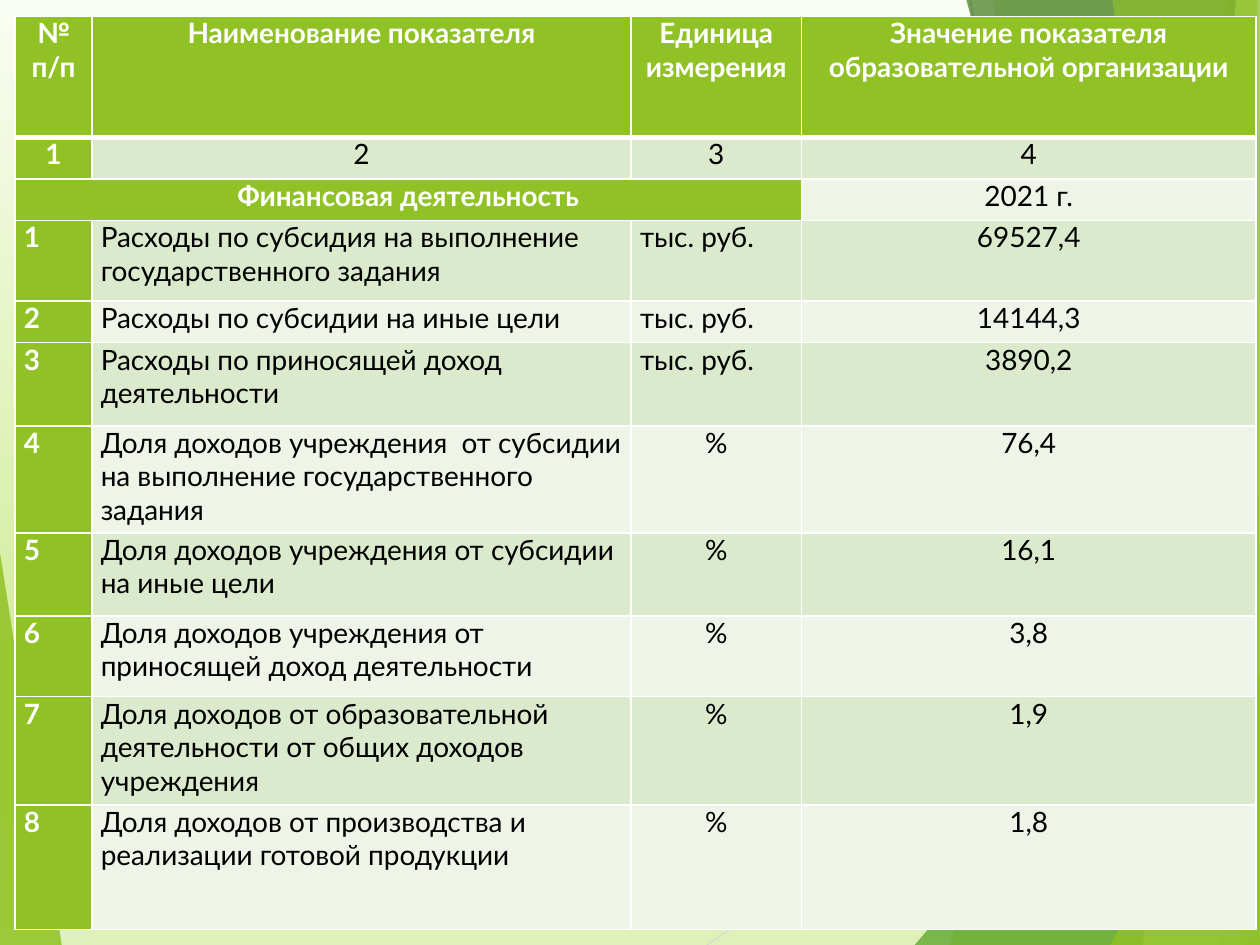
import pptx
import pptx.util
import pptx.dml.color
import pptx.enum.shapes
import pptx.enum.text
import pptx.oxml
import pptx.oxml.ns

RGB = pptx.dml.color.RGBColor.from_string
ALIGN = pptx.enum.text.PP_ALIGN
NS = pptx.oxml.ns.nsdecls("a")

theme = {
    "font": "Lato", "size": pptx.util.Pt(16),
    "green": "90C226", "leaf": "54A021", "dark": "3F7819", "lime": "C0E474",
    "band": "DBE9CD", "pale": "EEF4E8", "white": "FFFFFF", "black": "000000",
    "sky": [(0, "FAFDF3"), (74, "D0EB96"), (83, "D0EB96"), (100, "DFF1B9")],
}

deck = pptx.Presentation()
deck.slide_width, deck.slide_height = pptx.util.Inches(10), pptx.util.Inches(7.5)
wide, high = deck.slide_width, deck.slide_height
slide = deck.slides.add_slide(deck.slide_layouts[6])

# Background gradient, top to bottom
slide.background.fill.gradient()
grad = slide.element.xpath(".//a:gradFill")[0]
for part in list(grad):
    grad.remove(part)
stops = "".join(f'<a:gs pos="{pos * 1000}"><a:srgbClr val="{tint}"/></a:gs>'
                for pos, tint in theme["sky"])
grad.append(pptx.oxml.parse_xml(f"<a:gsLst {NS}>{stops}</a:gsLst>"))
grad.append(pptx.oxml.parse_xml(f'<a:lin {NS} ang="5400000" scaled="0"/>'))

# Facets and lines: colour, opacity in percent, points in percent of the slide
facets = [
    (theme["green"], 85, [(0, 58.5), (4.9, 100), (0, 100)]),
    ("D9D9D9", 100, [(56.1, 100), (100, 60.9)]),
    ("BFBFBF", 100, [(77, 0), (90.4, 100)]),
    (theme["green"], 30, [(97.5, 0), (75.4, 100), (100, 100), (100, 0)]),
    (theme["green"], 20, [(78.8, 0), (91.9, 100), (100, 100), (100, 0)]),
    (theme["leaf"], 72, [(72.6, 100), (100, 57.2), (100, 100)]),
    (theme["dark"], 70, [(76.7, 0), (97, 100), (100, 100), (100, 0)]),
    (theme["lime"], 70, [(98.1, 0), (90.7, 100), (100, 100), (100, 0)]),
    (theme["green"], 65, [(88.3, 0), (98.6, 100), (100, 100), (99.8, 0)]),
    (theme["green"], 80, [(88.1, 100), (100, 71.3), (100, 100)]),
]
for tint, shade, points in facets:
    spots = [(round(x * wide / 100), round(y * high / 100)) for x, y in points]
    if len(spots) == 2:
        line = slide.shapes.add_connector(
            pptx.enum.shapes.MSO_CONNECTOR.STRAIGHT, *spots[0], *spots[1])
        line.line.color.rgb = RGB(tint)
        line.line.width = pptx.util.Pt(0.75)
        line.element.spPr.append(pptx.oxml.parse_xml(f"<a:effectLst {NS}/>"))
        continue
    pen = slide.shapes.build_freeform(*spots[0])
    pen.add_line_segments(spots[1:], close=True)
    facet = pen.convert_to_shape()
    facet.shadow.inherit = False
    facet.fill.solid()
    facet.fill.fore_color.rgb = RGB(tint)
    facet.line.fill.background()
    facet.element.xpath("./p:spPr/a:solidFill/a:srgbClr")[0].append(
        pptx.oxml.parse_xml(f'<a:alpha {NS} val="{shade * 1000}"/>'))

# Table of figures
rows = [
    ("№ п/п", "Наименование показателя", "Единица измерения",
     "Значение показателя образовательной организации"),
    ("1", "2", "3", "4"),
    ("Финансовая деятельность", "", "", "2021 г."),
    ("1", "Расходы по субсидия на выполнение государственного задания",
     "тыс. руб.", "69527,4"),
    ("2", "Расходы по субсидии на иные цели", "тыс. руб.", "14144,3"),
    ("3", "Расходы по приносящей доход деятельности", "тыс. руб.", "3890,2"),
    ("4", "Доля доходов учреждения  от субсидии на выполнение "
          "государственного задания", "%", "76,4"),
    ("5", "Доля доходов учреждения от субсидии на иные цели", "%", "16,1"),
    ("6", "Доля доходов учреждения от приносящей доход деятельности", "%", "3,8"),
    ("7", "Доля доходов от образовательной деятельности от общих доходов "
          "учреждения", "%", "1,9"),
    ("8", "Доля доходов от производства и реализации готовой продукции",
     "%", "1,8"),
]
widths = [0.61, 4.28, 1.35, 3.61]
heights = [0.96, 0.33, 0.33, 0.64, 0.33, 0.66, 0.85, 0.66, 0.64, 0.86, 0.99]
inch = pptx.util.Inches
table = slide.shapes.add_table(len(rows), len(widths), inch(0.12), inch(0.13),
                               inch(sum(widths)), inch(sum(heights))).table
table.first_row = table.horz_banding = False
for col, width in zip(table.columns, widths):
    col.width = inch(width)
for row, height in zip(table.rows, heights):
    row.height = inch(height)
table.cell(2, 0).merge(table.cell(2, 2))

inset = {"margin_left": inch(0.07), "margin_right": inch(0.07),
         "margin_top": 0, "margin_bottom": 0}
for r, texts in enumerate(rows):
    for c, text in enumerate(texts):
        cell = table.cell(r, c)
        for name, value in inset.items():
            setattr(cell, name, value)
        head = r == 0 or c == 0 or (r == 2 and c < 3)
        cell.fill.solid()
        cell.fill.fore_color.rgb = RGB(
            theme["green"] if head else theme["band" if r % 2 else "pale"])
        edges = {"L": 1, "R": 1, "T": 3 if r == 1 else 1, "B": 3 if r == 0 else 1}
        props = cell._tc.get_or_add_tcPr()
        for i, (side, points) in enumerate(edges.items()):
            props.insert(i, pptx.oxml.parse_xml(
                f'<a:ln{side} {NS} w="{pptx.util.Pt(points)}"><a:solidFill>'
                f'<a:srgbClr val="{theme["white"]}"/></a:solidFill></a:ln{side}>'))
        if not text:
            continue
        para = cell.text_frame.paragraphs[0]
        left = r > 2 and (c < 2 or text == "тыс. руб.")
        para.alignment = ALIGN.LEFT if left else ALIGN.CENTER
        run = para.add_run()
        run.text = text
        style = {"name": theme["font"], "size": theme["size"], "bold": head}
        for name, value in style.items():
            setattr(run.font, name, value)
        run.font.color.rgb = RGB(theme["white" if head else "black"])

deck.save("out.pptx")
